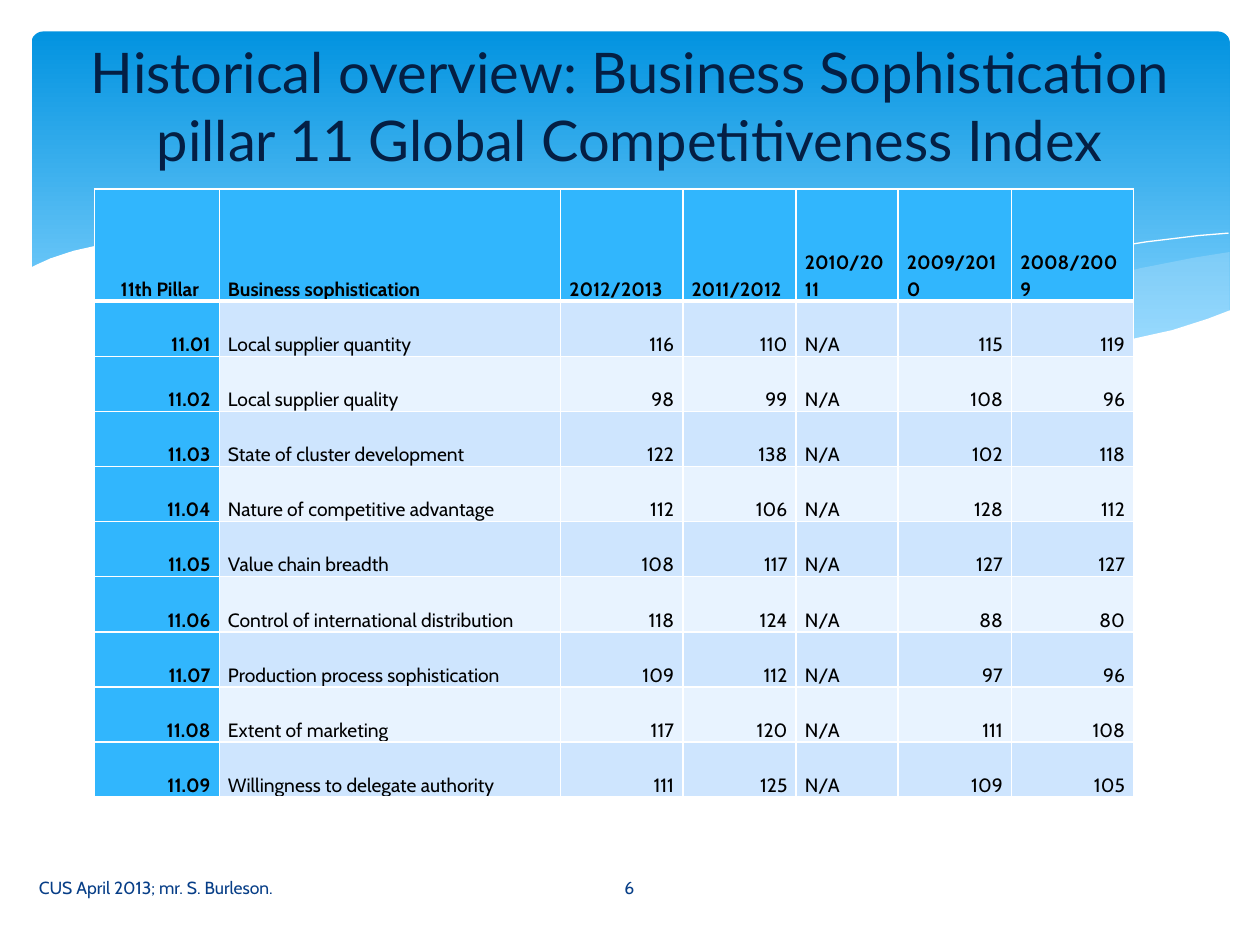
"""Build the slide on the business sophistication pillar, with its table of yearly ranks."""
import pptx
import pptx.dml.color
import pptx.enum.shapes
import pptx.enum.text
import pptx.oxml
import pptx.oxml.ns
import pptx.util
from lxml import etree

Pt = pptx.util.Pt
ALIGN = pptx.enum.text.PP_ALIGN
ANCHOR = pptx.enum.text.MSO_ANCHOR

TITLE = "Historical overview: Business Sophistication pillar 11 Global Competitiveness Index"
FOOTER = "CUS April 2013; mr. S. Burleson."
PAGE = "6"
HEADER = ("11th Pillar", "Business sophistication", "2012/2013", "2011/2012",
          "2010/2011", "2009/2010", "2008/2009")
RANKS = [
    ("11.01", "Local supplier quantity", "116", "110", "N/A", "115", "119"),
    ("11.02", "Local supplier quality", "98", "99", "N/A", "108", "96"),
    ("11.03", "State of cluster development", "122", "138", "N/A", "102", "118"),
    ("11.04", "Nature of competitive advantage", "112", "106", "N/A", "128", "112"),
    ("11.05", "Value chain breadth", "108", "117", "N/A", "127", "127"),
    ("11.06", "Control of international distribution", "118", "124", "N/A", "88", "80"),
    ("11.07", "Production process sophistication", "109", "112", "N/A", "97", "96"),
    ("11.08", "Extent of marketing", "117", "120", "N/A", "111", "108"),
    ("11.09", "Willingness to delegate authority", "111", "125", "N/A", "109", "105"),
]
COLUMN_WIDTHS = (71.3, 195.1, 69.8, 64.8, 58.3, 64.8, 69.8)
HEADER_HEIGHT, ROW_HEIGHT = 64.1, 31.5
LEFT_COLUMNS = (1, 4)

THEME = {
    "title_font": "Lato", "body_font": "Cabin",
    "title_size": 32, "table_size": 11, "footer_size": 10,
    "title": "041F44", "footer": "073E87", "text": "000000", "white": "FFFFFF",
    "accent": "31B6FD", "bands": ("CEE5FE", "E8F3FF"),
    "sky_top": "0293E0", "sky_bottom": "83D3FE", "wave": "C6E7FC",
}

RIGHT_WAVE = [
    (702.7, 144), (682.6, 147.2), (652, 153.2), (620, 160.6), (579.6, 170.6),
    (542, 178.6), (508, 185), (476, 190.8), (508, 195), (545, 198.4), (578, 199.8),
    (608, 199.4), (635, 197.2), (657, 193.7), (678, 188.6), (702.7, 177.8)]
MIDDLE_WAVE = [
    (643, 196.6), (603, 190.8), (558, 182.9), (508, 172.8), (453, 159.8), (420, 151.9),
    (390, 146), (361, 141), (318, 136), (274, 133.2), (248, 133.9), (206, 137.5),
    (246, 143.3), (291, 151.9), (323, 159.8), (382, 172.8), (433, 183.6), (479, 191.5),
    (520, 197), (556, 199.4), (596, 200.2), (624, 199.4)]
FALLING_CREST = [
    (222.5, 140.4), (236, 138.2), (261, 136), (300, 134.6), (338, 136), (384, 139.7),
    (438, 146.9), (479, 153.4), (523, 162.7), (572, 173.5), (626, 187.9), (653, 195.8)]
RISING_CREST = [
    (441.4, 185), (470, 177), (500, 169.2), (539, 160.6), (580, 151.2), (623, 143.3),
    (655, 138.2), (685, 134.6), (702, 133.2)]
FOREGROUND = [
    (703.4, 177.1), (690, 182.2), (670, 188.6), (647, 193.7), (621, 197.3), (593, 198.9),
    (571, 198.7), (536, 197.3), (495, 193), (451, 185.8), (400, 176.4), (362, 167.8),
    (322, 158.4), (282, 149), (245, 141.8), (210, 136.8), (180, 133.9), (152, 132.5),
    (127, 132.5), (105, 133.2), (86, 134.6), (68, 137.5), (55, 140.4), (42, 143.3),
    (29, 147.6), (21, 151.2), (16.6, 153.4), (16.6, 236.9), (703.4, 236.9)]


def colour(value):
    return pptx.dml.color.RGBColor.from_string(value)


def style(paragraph, font, size, fill, bold=False):
    for run in paragraph.runs:
        run.font.name, run.font.size, run.font.bold = font, Pt(size), bold
        run.font.color.rgb = colour(fill)


def add_wave(shapes, points, fill=None, opacity=100):
    """Draw a filled wave, or a white hairline crest when no fill is given."""
    (x, y), *rest = [(Pt(px), Pt(py)) for px, py in points]
    builder = shapes.build_freeform(x, y, scale=1.0)
    builder.add_line_segments(rest, close=fill is not None)
    wave = builder.convert_to_shape()
    wave.shadow.inherit = False
    if fill is None:
        wave.fill.background()
        wave.line.color.rgb = colour(THEME["white"])
        wave.line.width = Pt(0)
        return
    wave.line.fill.background()
    wave.fill.solid()
    wave.fill.fore_color.rgb = colour(fill)
    if opacity < 100:
        tint = wave._element.find(".//" + pptx.oxml.ns.qn("a:srgbClr"))
        etree.SubElement(tint, pptx.oxml.ns.qn("a:alpha"), val=str(opacity * 1000))


def add_backdrop(shapes):
    sky = shapes.add_shape(pptx.enum.shapes.MSO_SHAPE.ROUNDED_RECTANGLE,
                           Pt(18), Pt(18), Pt(684.7), Pt(194.4))
    sky.adjustments[0] = 0.034
    sky.shadow.inherit = False
    sky.line.fill.background()
    sky.fill.gradient()
    sky.fill.gradient_angle = 270
    stops = zip(sky.fill.gradient_stops, ("sky_top", "sky_bottom"), (0, 0.9))
    for stop, name, position in stops:
        stop.color.rgb = colour(THEME[name])
        stop.position = position
    add_wave(shapes, RIGHT_WAVE, THEME["wave"], 29)
    add_wave(shapes, MIDDLE_WAVE, THEME["wave"], 40)
    add_wave(shapes, FALLING_CREST)
    add_wave(shapes, RISING_CREST)
    add_wave(shapes, FOREGROUND, THEME["white"])


def add_footer(shapes, text, left, width, align):
    frame = shapes.add_textbox(Pt(left), Pt(492.5), Pt(width), Pt(28.8)).text_frame
    frame.word_wrap = True
    frame.vertical_anchor = ANCHOR.MIDDLE
    frame.text = text
    frame.paragraphs[0].alignment = align
    style(frame.paragraphs[0], THEME["body_font"], THEME["footer_size"], THEME["footer"])


def set_borders(cell, row):
    properties = cell._tc.get_or_add_tcPr()
    widths = {"lnL": 1, "lnR": 1, "lnT": 3 if row == 1 else 1, "lnB": 3 if row == 0 else 1}
    for side, width in widths.items():
        properties.append(pptx.oxml.parse_xml(
            f'<a:{side} {pptx.oxml.ns.nsdecls("a")} w="{Pt(width)}"><a:solidFill>'
            f'<a:srgbClr val="{THEME["white"]}"/></a:solidFill></a:{side}>'))


def fill_cell(cell, text, row, column):
    heading = row == 0 or column == 0
    set_borders(cell, row)
    cell.fill.solid()
    cell.fill.fore_color.rgb = colour(THEME["accent"] if heading else THEME["bands"][(row - 1) % 2])
    cell.margin_left = Pt(15 if row == column == 0 else 5)
    cell.margin_right = Pt(5)
    cell.margin_top = cell.margin_bottom = 0
    cell.vertical_anchor = ANCHOR.BOTTOM
    cell.text_frame.text = text
    paragraph = cell.text_frame.paragraphs[0]
    paragraph.line_spacing = 1.15
    paragraph.alignment = ALIGN.LEFT if row == 0 or column in LEFT_COLUMNS else ALIGN.RIGHT
    style(paragraph, THEME["body_font"], THEME["table_size"], THEME["text"], heading)


def add_ranks(shapes):
    rows = [HEADER, *RANKS]
    heights = [HEADER_HEIGHT] + [ROW_HEIGHT] * len(RANKS)
    ranks = shapes.add_table(len(rows), len(HEADER), Pt(54), Pt(108),
                             Pt(sum(COLUMN_WIDTHS)), Pt(sum(heights))).table
    for column, width in zip(ranks.columns, COLUMN_WIDTHS):
        column.width = Pt(width)
    for row, (texts, height) in enumerate(zip(rows, heights)):
        ranks.rows[row].height = Pt(height)
        for column, text in enumerate(texts):
            fill_cell(ranks.cell(row, column), text, row, column)


def main():
    deck = pptx.Presentation()
    deck.slide_width, deck.slide_height = Pt(720), Pt(540)
    slide = deck.slides.add_slide(deck.slide_layouts[5])
    shapes = slide.shapes
    add_backdrop(shapes)
    add_footer(shapes, FOOTER, 15.1, 298, ALIGN.LEFT)
    add_footer(shapes, PAGE, 314, 91.4, ALIGN.CENTER)

    title = shapes.title
    shapes._spTree.append(title._element)
    title.left, title.top, title.width, title.height = Pt(18), Pt(0), Pt(684), Pt(120.2)
    title.text_frame.text = TITLE
    title.text_frame.word_wrap = True
    title.text_frame.vertical_anchor = ANCHOR.MIDDLE
    title.text_frame.paragraphs[0].alignment = ALIGN.CENTER
    style(title.text_frame.paragraphs[0], THEME["title_font"], THEME["title_size"], THEME["title"])

    add_ranks(shapes)
    deck.save("out.pptx")


if __name__ == "__main__":
    main()
